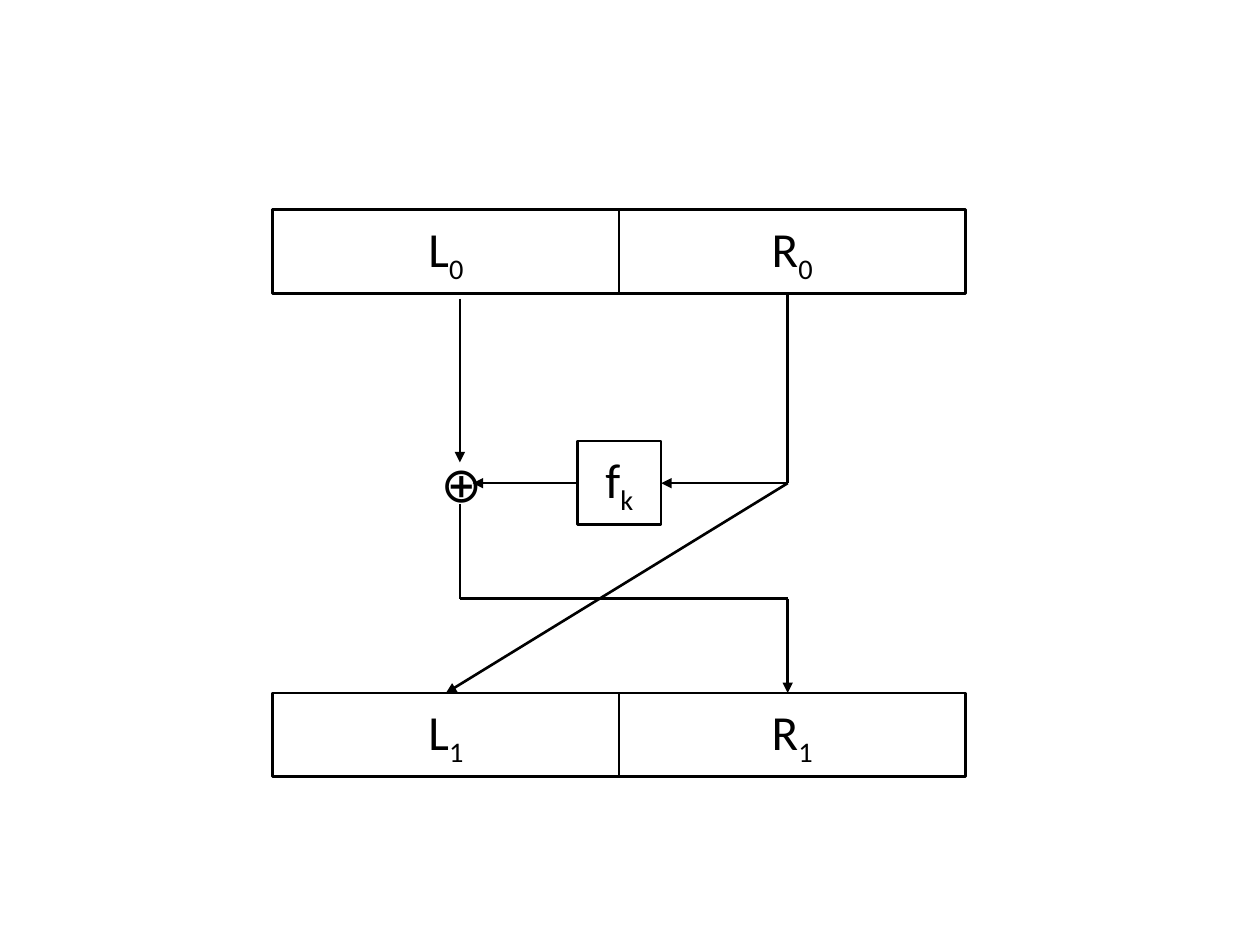
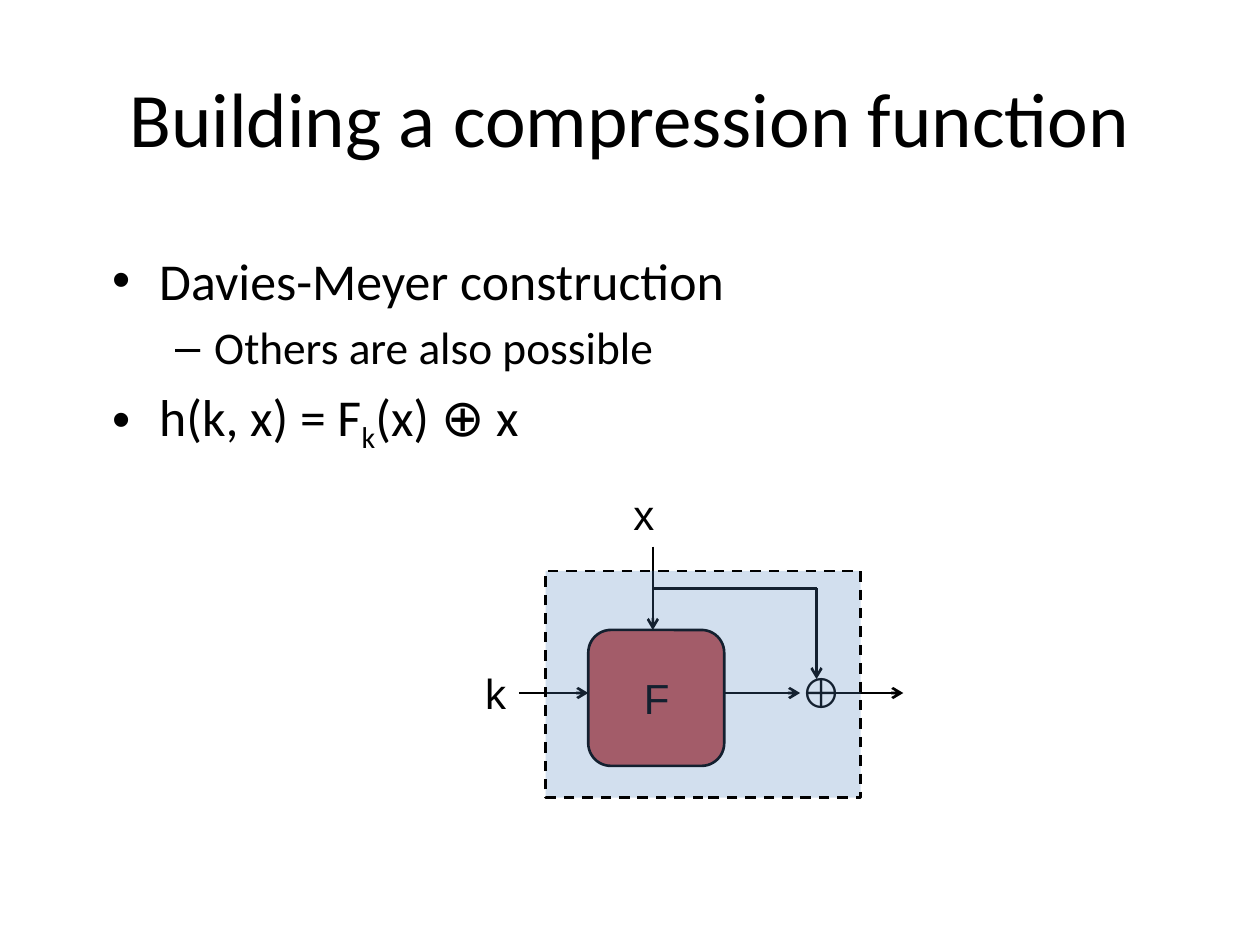
import pptx
import pptx.dml.color
import pptx.enum.dml
import pptx.enum.shapes
import pptx.enum.text
import pptx.oxml
import pptx.oxml.ns
import pptx.util

Cm, Pt = pptx.util.Cm, pptx.util.Pt
SHAPE = pptx.enum.shapes.MSO_SHAPE
ANCHOR = pptx.enum.text.MSO_ANCHOR
ALIGN = pptx.enum.text.PP_ALIGN
AUTO_SIZE = pptx.enum.text.MSO_AUTO_SIZE

BLACK, RED, BLUE = "000000", "C0504D", "4F81BD"
LINE_WIDTH = 1.5

# Text: an underscore makes the next character a subscript. Lengths are in cm.
LABEL = {"name": "Calibri", "size": Pt(28)}
TITLE = {"name": "Calibri", "size": Pt(44)}
SIGN = {"name": "Arial", "size": Pt(24)}

# Feistel round
HALVES_LEFT, HALF_WIDTH, CELL = 5.5, 6.98, 1.69
BLOCK_ROWS = [(4.23, ("L_0", "R_0")), (13.97, ("L_1", "R_1"))]
ROUND_FUNCTION = ("f_k", (11.64, 8.89, CELL, CELL))
ROUND_XOR = ("⊕", (8.64, 9.02, 1.27, 1.45))
LEFT_X, RIGHT_X, ROUND_Y, SWAP_Y, OUTPUT_Y = 9.27, 15.88, 9.74, 12.07, 13.97
ROUND_LINES = [  # start, end, arrowhead
    ((11.64, ROUND_Y), (9.53, ROUND_Y), "triangle"),
    ((RIGHT_X, 5.92), (RIGHT_X, ROUND_Y), None),
    ((RIGHT_X, ROUND_Y), (13.33, ROUND_Y), "triangle"),
    ((LEFT_X, 6.02), (LEFT_X, 9.32), "triangle"),
    ((LEFT_X, 10.16), (LEFT_X, SWAP_Y), None),
    ((LEFT_X, SWAP_Y), (RIGHT_X, SWAP_Y), None),
    ((RIGHT_X, SWAP_Y), (RIGHT_X, OUTPUT_Y), "triangle"),
    ((RIGHT_X, ROUND_Y), (8.99, OUTPUT_Y), "triangle"),
]

# Compression function
HEADING = ("Building a compression function", (1.27, 0.76, 22.86, 3.18))
POINTS_BOX = (2.01, 4.88, 21.36, 4.11)
POINTS = [  # level, text
    (0, "Davies-Meyer construction"),
    (1, "Others are also possible"),
    (0, "h(k, x) = F_k(x) ⊕ x"),
]
POINT_LEVELS = [  # size, bullet, left margin, hanging indent
    (29.6, "•", 0.95, 0.95),
    (25.9, "–", 2.06, 0.79),
]
CIPHER_BOX = (11.86, 12.7, 2.74, 2.74)
COMPRESSION_BOX = (11, 11.51, 6.35, 4.57)
SIGNS = [
    ("F", (12.73, 13.44, 1.04, 1.3)),
    ("k", (9.53, 13.34, 0.94, 1.27)),
    ("x", (12.52, 9.73, 0.94, 1.27)),
    ("⊕", (15.88, 13.31, 1.17, 1.3)),
]
INPUT_X, XOR_X, BRANCH_Y, FLOW_Y = 13.16, 16.46, 11.86, 13.97
FLOW_LINES = [
    ((INPUT_X, 11.02), (INPUT_X, 12.7), "arrow"),
    ((10.46, FLOW_Y), (11.86, FLOW_Y), "arrow"),
    ((14.6, FLOW_Y), (16.13, FLOW_Y), "arrow"),
    ((INPUT_X, BRANCH_Y), (XOR_X, BRANCH_Y), None),
    ((XOR_X, BRANCH_Y), (XOR_X, 13.69), "arrow"),
    ((16.81, FLOW_Y), (18.21, FLOW_Y), "arrow"),
]


def color(hex_code):
    return pptx.dml.color.RGBColor.from_string(hex_code)


def lengths(numbers):
    return [Cm(number) for number in numbers]


def set_all(target, values):
    for attribute, value in values.items():
        setattr(target, attribute, value)


def add_child(parent, tag, **attributes):
    child = pptx.oxml.parse_xml(f"<{tag} {pptx.oxml.ns.nsdecls('a')}/>")
    for attribute, value in attributes.items():
        child.set(attribute, value)
    parent.append(child)


def write(paragraph, text, font):
    first, *rest = text.split("_")
    pieces = [(first, False)]
    for piece in rest:
        pieces += [(piece[0], True), (piece[1:], False)]
    for piece, is_subscript in pieces:
        if not piece:
            continue
        run = paragraph.add_run()
        run.text = piece
        set_all(run.font, font)
        run.font.color.rgb = color(BLACK)
        if is_subscript:
            run._r.get_or_add_rPr().set("baseline", "-25000")


def add_box(slide, box, kind=SHAPE.RECTANGLE, fill=None, opacity=None, label=""):
    shape = slide.shapes.add_shape(kind, *lengths(box))
    shape.shadow.inherit = False
    set_all(shape.line, {"width": Pt(LINE_WIDTH)})
    shape.line.color.rgb = color(BLACK)
    if fill:
        shape.fill.solid()
        shape.fill.fore_color.rgb = color(fill)
    else:
        shape.fill.background()
    if opacity:
        paint = shape._element.spPr.find(".//" + pptx.oxml.ns.qn("a:srgbClr"))
        add_child(paint, "a:alpha", val=str(opacity * 1000))
    if label:
        set_all(shape.text_frame, {"vertical_anchor": ANCHOR.MIDDLE, "word_wrap": True})
        paragraph = shape.text_frame.paragraphs[0]
        paragraph.alignment = ALIGN.CENTER
        write(paragraph, label, LABEL)
    return shape


def add_sign(slide, text, box, font):
    frame = slide.shapes.add_textbox(*lengths(box)).text_frame
    set_all(frame, {"word_wrap": False, "auto_size": AUTO_SIZE.SHAPE_TO_FIT_TEXT})
    write(frame.paragraphs[0], text, font)


def add_lines(slide, lines):
    for start, end, arrowhead in lines:
        connector = slide.shapes.add_connector(
            pptx.enum.shapes.MSO_CONNECTOR.STRAIGHT, *lengths(start + end))
        connector.line.width = Pt(LINE_WIDTH)
        connector.line.color.rgb = color(BLACK)
        if arrowhead:
            add_child(connector.line._get_or_add_ln(), "a:tailEnd", type=arrowhead)
        add_child(connector._element.spPr, "a:effectLst")


def add_heading(slide, text, box):
    frame = slide.shapes.add_textbox(*lengths(box)).text_frame
    set_all(frame, {"word_wrap": True, "vertical_anchor": ANCHOR.MIDDLE})
    frame.paragraphs[0].alignment = ALIGN.CENTER
    write(frame.paragraphs[0], text, TITLE)


def add_points(slide):
    frame = slide.shapes.add_textbox(*lengths(POINTS_BOX)).text_frame
    frame.word_wrap = True
    for index, (level, text) in enumerate(POINTS):
        paragraph = frame.add_paragraph() if index else frame.paragraphs[0]
        size, bullet, margin, hanging = POINT_LEVELS[level]
        set_all(paragraph, {"level": level, "space_before": Pt(size * 0.2)})
        properties = paragraph._p.get_or_add_pPr()
        properties.set("marL", str(Cm(margin)))
        properties.set("indent", str(-Cm(hanging)))
        add_child(properties, "a:buFont", typeface="Arial")
        add_child(properties, "a:buChar", char=bullet)
        write(paragraph, text, {"name": "Calibri", "size": Pt(size)})


def build_feistel_round(slide):
    for top, halves in BLOCK_ROWS:
        for column, half in enumerate(halves):
            left = HALVES_LEFT + column * HALF_WIDTH
            add_box(slide, (left, top, HALF_WIDTH, CELL), label=half)
    label, box = ROUND_FUNCTION
    add_box(slide, box, label=label)
    add_sign(slide, *ROUND_XOR, LABEL)
    add_lines(slide, ROUND_LINES)


def build_compression_function(slide):
    add_heading(slide, *HEADING)
    add_points(slide)
    add_box(slide, CIPHER_BOX, SHAPE.ROUNDED_RECTANGLE, RED)
    for text, box in SIGNS:
        add_sign(slide, text, box, SIGN)
    add_lines(slide, FLOW_LINES)
    boundary = add_box(slide, COMPRESSION_BOX, fill=BLUE, opacity=25)
    boundary.line.dash_style = pptx.enum.dml.MSO_LINE.DASH


def main():
    deck = pptx.Presentation()
    set_all(deck, {"slide_width": Cm(25.4), "slide_height": Cm(19.05)})
    blank = deck.slide_layouts[6]
    for build in (build_feistel_round, build_compression_function):
        build(deck.slides.add_slide(blank))
    deck.save("out.pptx")


if __name__ == "__main__":
    main()
